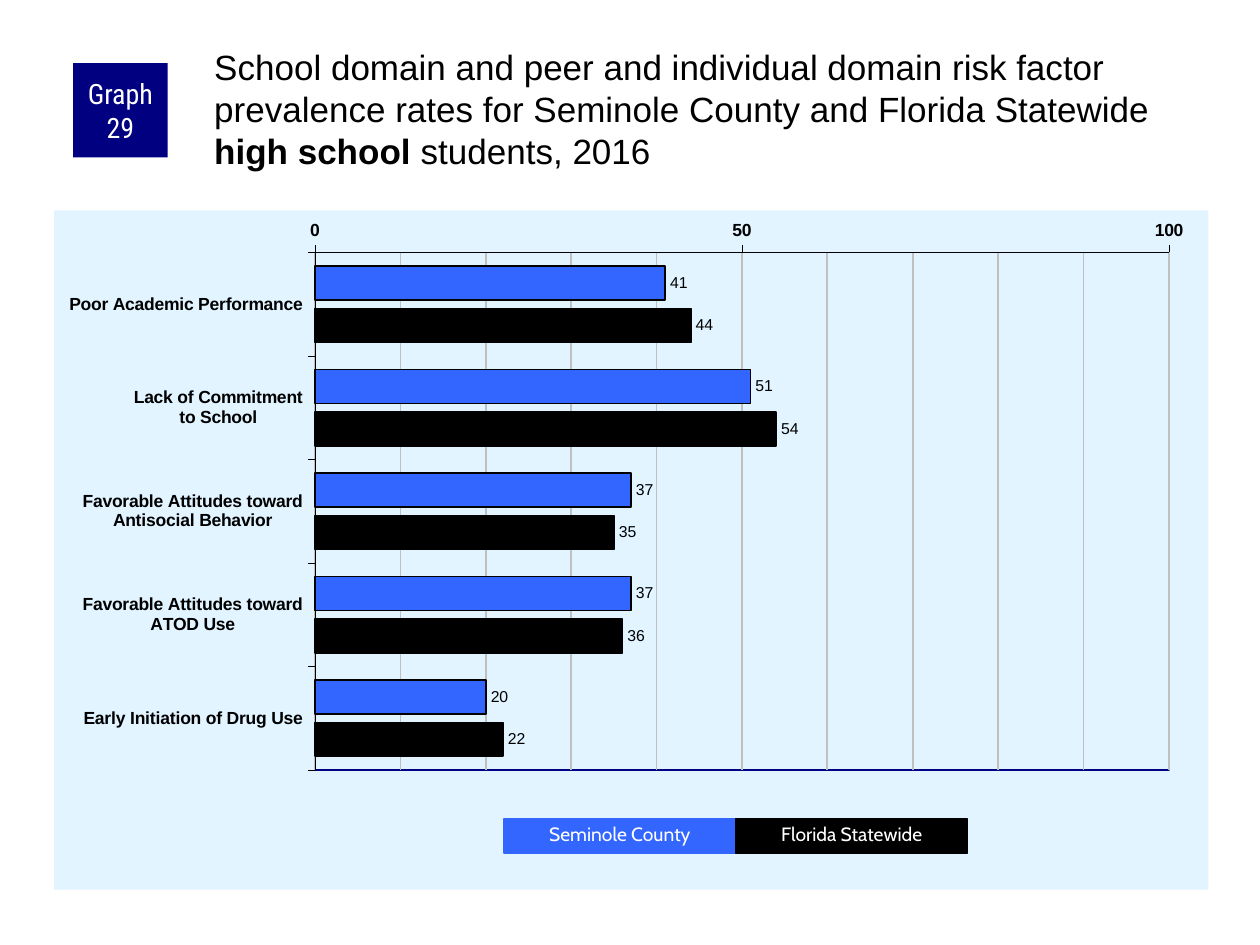
from copy import deepcopy

from lxml import etree
from pptx import Presentation
from pptx.chart.data import CategoryChartData
from pptx.dml.color import RGBColor
from pptx.enum.chart import XL_AXIS_CROSSES, XL_CHART_TYPE, XL_LABEL_POSITION, XL_TICK_MARK
from pptx.enum.shapes import MSO_SHAPE
from pptx.enum.text import MSO_ANCHOR, MSO_AUTO_SIZE, PP_ALIGN
from pptx.oxml import parse_xml
from pptx.oxml.ns import nsdecls, qn
from pptx.util import Inches, Pt

BLACK = RGBColor(0x00, 0x00, 0x00)
WHITE = RGBColor(0xFF, 0xFF, 0xFF)
NAVY = RGBColor(0x00, 0x00, 0x80)
BLUE = RGBColor(0x33, 0x66, 0xFF)
PALE = RGBColor(0xE1, 0xF4, 0xFF)
GRAY = RGBColor(0xC0, 0xC0, 0xC0)

BAR_CLUSTERED = XL_CHART_TYPE.BAR_CLUSTERED
OUTSIDE_END = XL_LABEL_POSITION.OUTSIDE_END
TICK_OUT, TICK_NONE = XL_TICK_MARK.OUTSIDE, XL_TICK_MARK.NONE
CROSS_MAX = XL_AXIS_CROSSES.MAXIMUM
RECTANGLE = MSO_SHAPE.RECTANGLE
TOP, MIDDLE = MSO_ANCHOR.TOP, MSO_ANCHOR.MIDDLE
GROW = MSO_AUTO_SIZE.SHAPE_TO_FIT_TEXT
CENTER = PP_ALIGN.CENTER

CATEGORIES = [
    "Poor Academic Performance",
    "Lack of Commitment\nto School",
    "Favorable Attitudes toward\nAntisocial Behavior",
    "Favorable Attitudes toward\nATOD Use",
    "Early Initiation of Drug Use",
]
SERIES = [
    ("Seminole County", BLUE, (41, 51, 37, 37, 20)),
    ("Florida Statewide", BLACK, (44, 54, 35, 36, 22)),
]
TITLE = [
    ("School domain and peer and individual domain risk factor prevalence "
     "rates for Seminole County and Florida Statewide ", False),
    ("high school", True),
    (" students, 2016", False),
]
PLOT_BOX = {"x": 0.226, "y": 0.062, "w": 0.74, "h": 0.762}


def style_font(font, name, size, color, bold=False):
    """Set the face, size, colour and weight of a font."""
    font.name, font.size, font.bold = name, Pt(size), bold
    font.color.rgb = color


def style_line(line, color, width):
    """Give a line a solid colour and a width in points."""
    line.color.rgb = color
    line.width = Pt(width)


def add_box(slide, box, text, fill, font_name, size):
    """Add a filled rectangle with centred white text."""
    sp = slide.shapes.add_shape(RECTANGLE, *map(Inches, box))
    sp.shadow.inherit = False
    sp.fill.solid()
    sp.fill.fore_color.rgb = fill
    sp.line.fill.background()
    tf = sp.text_frame
    tf.word_wrap = True
    p = tf.paragraphs[0]
    p.text = text
    p.alignment = CENTER
    style_font(p.runs[0].font, font_name, size, WHITE)
    return sp


def add_badge(slide, box):
    """Add the square that carries the graph number."""
    tf = add_box(slide, box, "Graph 29", NAVY, "Roboto Condensed", 16).text_frame
    tf.vertical_anchor = MIDDLE
    tf.margin_left = tf.margin_right = Inches(0.05)
    tf.margin_top = tf.margin_bottom = 0


def add_title(slide, box):
    """Add the heading with its bold words."""
    tf = slide.shapes.add_textbox(*map(Inches, box)).text_frame
    tf.word_wrap = True
    tf.margin_left = tf.margin_top = Inches(0.03)
    tf.margin_right = tf.margin_bottom = 0
    for text, bold in TITLE:
        r = tf.paragraphs[0].add_run()
        r.text = text
        style_font(r.font, "Arial", 20, BLACK, bold)


def add_legend(slide, box):
    """Add one equal key box per series, side by side."""
    left, top, width, height = box
    step = width / len(SERIES)
    for i, (name, color, _) in enumerate(SERIES):
        sp = add_box(slide, (left + i * step, top, step, height), name, color, "Cabin", 11)
        style_line(sp.line, color, 0.75)
        tf = sp.text_frame
        tf.vertical_anchor = TOP
        tf.auto_size = GROW
        tf.paragraphs[0].line_spacing = 0.9


def style_areas(chart):
    """Fill the chart area, place the plot area and outline it."""
    space = chart.element if hasattr(chart, "element") else chart._chartSpace
    plot_area = space.find(".//" + qn("c:plotArea"))
    for old in plot_area.findall(qn("c:layout")):
        plot_area.remove(old)
    sizes = "".join(f'<c:{k} val="{v}"/>' for k, v in PLOT_BOX.items())
    plot_area.insert(0, parse_xml(
        f'<c:layout {nsdecls("c")}><c:manualLayout><c:layoutTarget val="inner"/>'
        f'<c:xMode val="edge"/><c:yMode val="edge"/>{sizes}</c:manualLayout></c:layout>'))
    plot_area.append(parse_xml(
        f'<c:spPr {nsdecls("c", "a")}><a:noFill/><a:ln w="{Pt(1)}"><a:solidFill>'
        f'<a:srgbClr val="{NAVY}"/></a:solidFill></a:ln></c:spPr>'))
    space.find(qn("c:chart")).addnext(parse_xml(
        f'<c:spPr {nsdecls("c", "a")}><a:solidFill><a:srgbClr val="{PALE}"/></a:solidFill>'
        '<a:ln><a:noFill/></a:ln></c:spPr>'))


def style_axes(chart):
    """Set both axes, with grid lines every ten and labels every fifty."""
    cat, val = chart.category_axis, chart.value_axis
    for axis in (cat, val):
        axis.major_tick_mark, axis.minor_tick_mark = TICK_OUT, TICK_NONE
        style_font(axis.tick_labels.font, "Arial", 10, BLACK, True)
        style_line(axis.format.line, BLACK, 0.25)
    cat.reverse_order = True
    cat.crosses = CROSS_MAX
    val.minimum_scale, val.maximum_scale, val.major_unit = 0, 100, 50
    val.minor_unit = 10
    val.has_major_gridlines = val.has_minor_gridlines = True
    style_line(val.major_gridlines.format.line, GRAY, 1)
    major, minor = (val._element.find(qn(f"c:{k}Gridlines")) for k in ("major", "minor"))
    minor.append(deepcopy(major.find(qn("c:spPr"))))


def add_bar_chart(slide, box):
    """Add the clustered bars of both series."""
    data = CategoryChartData()
    data.categories = CATEGORIES
    for name, _, values in SERIES:
        data.add_series(name, values)
    chart = slide.shapes.add_chart(BAR_CLUSTERED, *map(Inches, box), data).chart
    chart.has_legend = chart.has_title = False
    style_font(chart.font, "Arial", 11.8, BLACK)
    plot = chart.plots[0]
    plot.gap_width, plot.overlap, plot.vary_by_categories = 80, -25, False
    for s, (_, color, _) in zip(plot.series, SERIES):
        s.invert_if_negative = False
        s.format.fill.solid()
        s.format.fill.fore_color.rgb = color
        style_line(s.format.line, BLACK, 1)
        labels = s.data_labels
        labels.show_value = True
        labels.position = OUTSIDE_END
        style_font(labels.font, "Arial", 9, BLACK)
    style_axes(chart)
    style_areas(chart)


def main():
    """Build the slide and save it."""
    prs = Presentation()
    prs.slide_width, prs.slide_height = Inches(10), Inches(7.5)
    slide = prs.slides.add_slide(prs.slide_layouts[6])
    add_bar_chart(slide, (0.43, 1.67, 9.16, 5.39))
    add_badge(slide, (0.58, 0.5, 0.75, 0.75))
    add_title(slide, (1.67, 0.33, 7.92, 0.83))
    add_legend(slide, (4, 6.5, 3.68, 0.27))
    prs.save("out.pptx")


if __name__ == "__main__":
    main()
